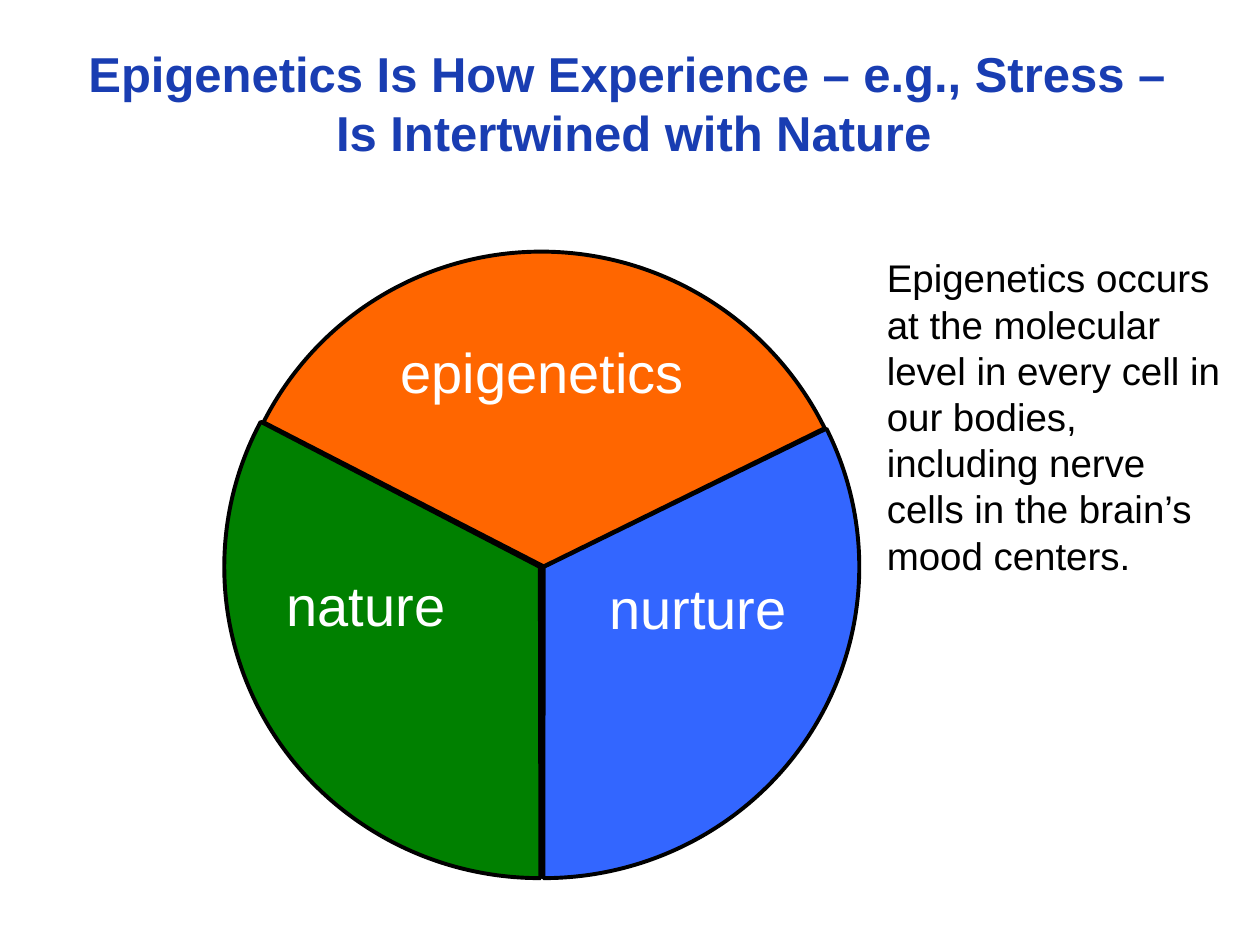
from pptx import Presentation
from pptx import util as u
from pptx.dml.color import RGBColor
from pptx.enum import shapes, text

BLACK = RGBColor(0x00, 0x00, 0x00)
WHITE = RGBColor(0xFF, 0xFF, 0xFF)
NAVY = RGBColor(0x19, 0x3D, 0xB2)
GREEN = RGBColor(0x00, 0x80, 0x00)
BLUE = RGBColor(0x33, 0x66, 0xFF)
ORANGE = RGBColor(0xFF, 0x66, 0x00)

ADJUSTMENT_PER_DEGREE = 0.6


class SlideBuilder:
    font_name = "Arial"
    outline_width = u.Pt(2.25)

    def __init__(self, page):
        self.page = page

    def wedge(self, bounds, angles, color, flipped=False, rotation=0):
        pie = self.page.shapes.add_shape(
            shapes.MSO_SHAPE.PIE, *map(u.Inches, bounds))
        for index, angle in enumerate(angles):
            pie.adjustments[index] = angle * ADJUSTMENT_PER_DEGREE
        pie.shadow.inherit = False
        pie.fill.solid()
        pie.fill.fore_color.rgb = color
        pie.line.color.rgb = BLACK
        pie.line.width = self.outline_width
        pie.rotation = rotation
        if flipped:
            pie.element.spPr.get_or_add_xfrm().set("flipH", "1")

    def text(self, bounds, lines, size, color, align=text.PP_ALIGN.CENTER,
             wrap=True, bold=False):
        box = self.page.shapes.add_textbox(*map(u.Inches, bounds))
        frame = box.text_frame
        frame.word_wrap = wrap
        frame.auto_size = text.MSO_AUTO_SIZE.SHAPE_TO_FIT_TEXT
        style = {"name": self.font_name, "size": u.Pt(size), "bold": bold}
        for index, line in enumerate(lines):
            para = frame.add_paragraph() if index else frame.paragraphs[0]
            para.alignment = align
            span = para.add_run()
            span.text = line
            for key, value in style.items():
                setattr(span.font, key, value)
            span.font.color.rgb = color

    def label(self, bounds, word):
        self.text(bounds, [word], 32, WHITE, wrap=False)


def main():
    deck = Presentation()
    deck.slide_width = u.Inches(10)
    deck.slide_height = u.Inches(7.5)
    builder = SlideBuilder(deck.slides.add_slide(deck.slide_layouts[6]))

    builder.wedge((1.78, 2.03, 5.01, 4.94), (89.9, 207.47), GREEN)
    builder.wedge((1.81, 2.03, 5.01, 4.94), (89.96, 206.05), BLUE,
                  flipped=True)
    builder.label((2.17, 4.48, 1.47, 0.64), "nature")
    builder.label((4.73, 4.5, 1.62, 0.64), "nurture")
    builder.wedge((1.81, 2.01, 5.01, 4.97), (80.7, 207.27), ORANGE,
                  flipped=True, rotation=234.5)
    builder.label((3.07, 2.63, 2.47, 0.64), "epigenetics")

    builder.text(
        (0.23, 0.3, 9.6, 1.04),
        ["Epigenetics Is How Experience – e.g., Stress – ",
         "Is Intertwined with Nature"],
        28, NAVY, bold=True)
    builder.text(
        (6.94, 1.97, 2.88, 2.69),
        ["Epigenetics occurs at the molecular level in every cell in our "
         "bodies, including nerve cells in the brain’s mood centers."],
        22, BLACK, align=text.PP_ALIGN.LEFT)

    deck.save("out.pptx")


if __name__ == "__main__":
    main()
